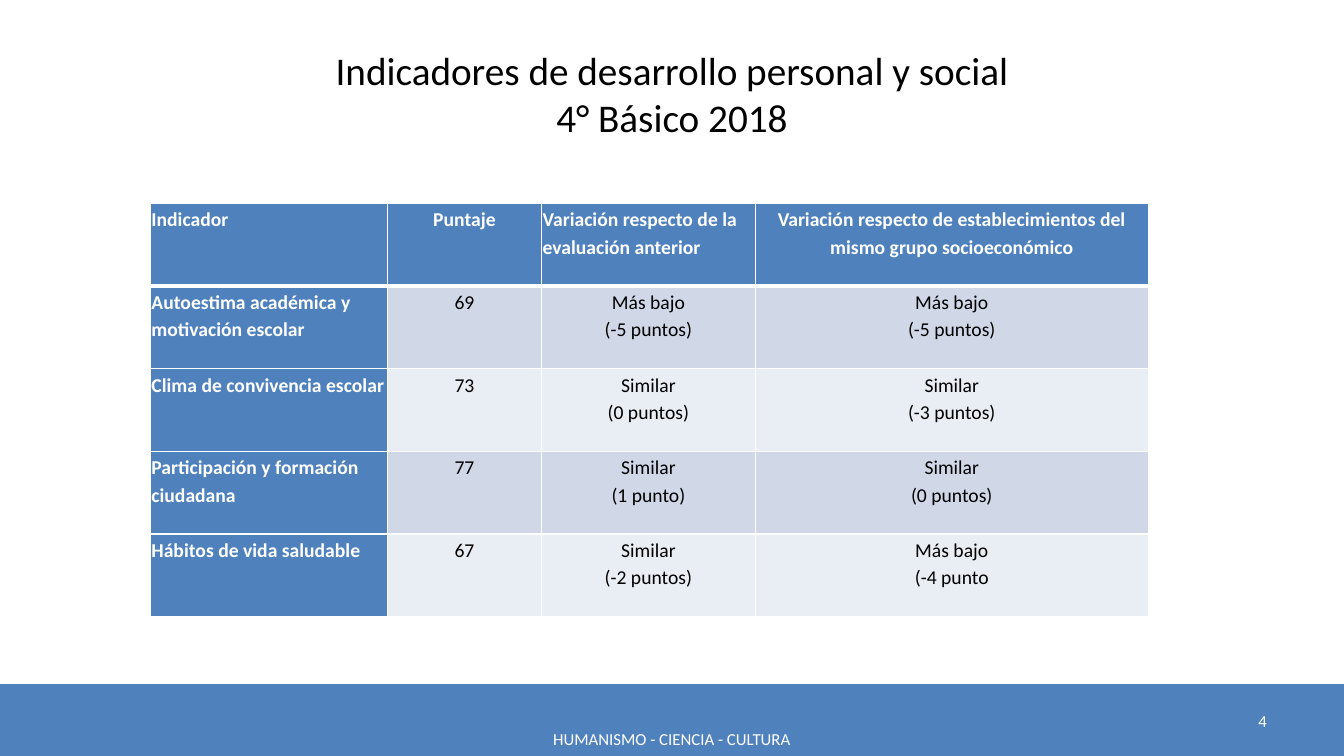
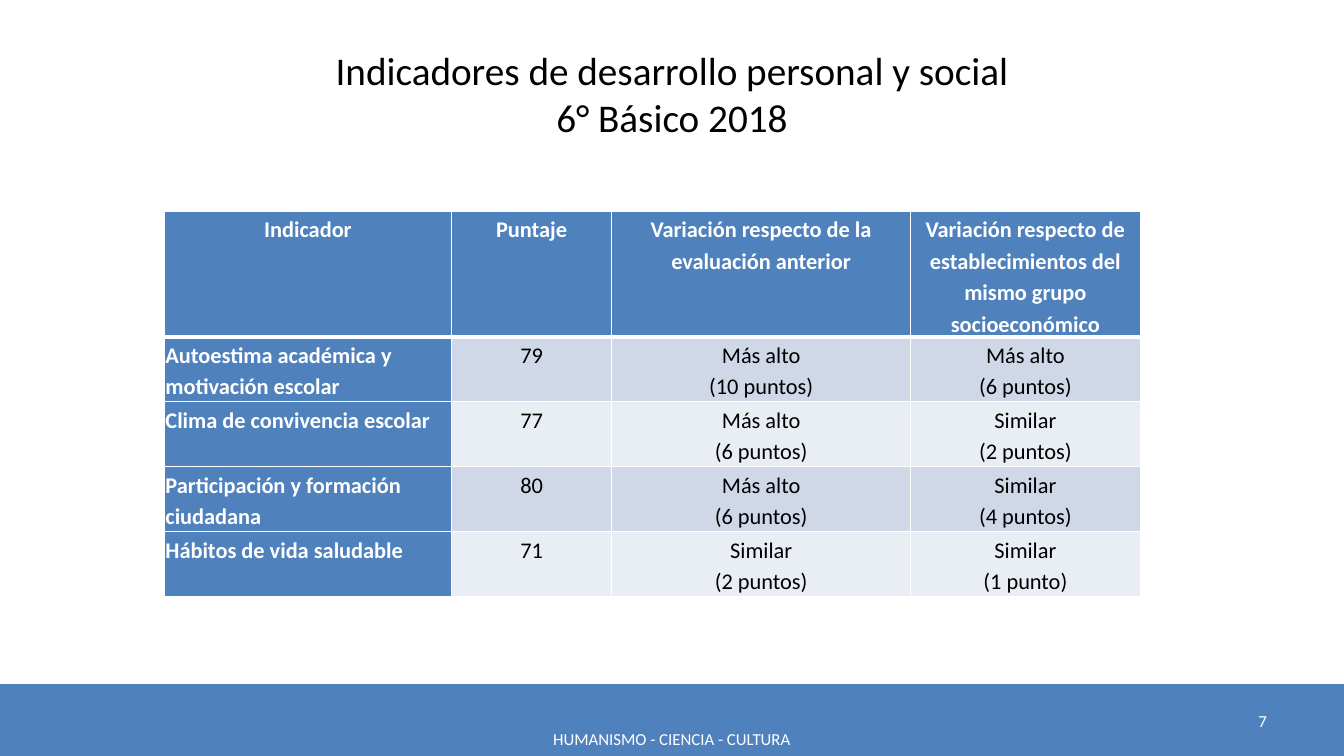
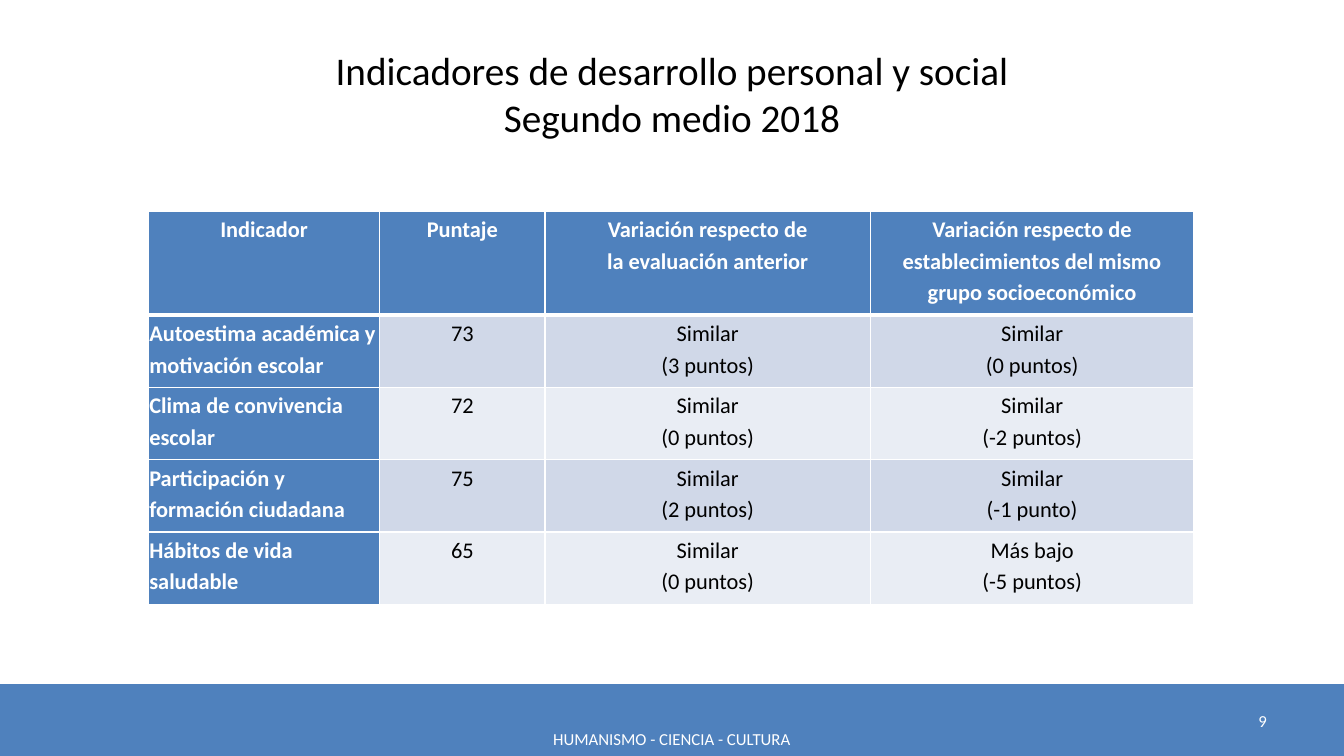
from pptx import Presentation
from pptx.dml.color import RGBColor
from pptx.enum.shapes import MSO_SHAPE
from pptx.enum.text import MSO_ANCHOR, PP_ALIGN
from pptx.oxml import parse_xml
from pptx.oxml.ns import nsdecls
from pptx.util import Pt

BLUE = RGBColor(0x4F, 0x81, 0xBD)
BANDS = RGBColor(0xD0, 0xD8, 0xE8), RGBColor(0xE9, 0xED, 0xF4)
WHITE = RGBColor(0xFF, 0xFF, 0xFF)
BLACK = RGBColor(0, 0, 0)
FONT = "Calibri"

HEADS = [
    "Indicador",
    "Puntaje",
    "Variación respecto de la evaluación anterior",
    "Variación respecto de establecimientos del mismo grupo socioeconómico",
]
SPLIT_HEADS = HEADS[:2] + [
    "Variación respecto de\nla evaluación anterior",
    "Variación respecto de establecimientos del mismo\ngrupo socioeconómico",
]
INDICATORS = [
    "Autoestima académica y motivación escolar",
    "Clima de convivencia escolar",
    "Participación y formación ciudadana",
    "Hábitos de vida saludable",
]


class Deck:
    def __init__(self):
        self.prs = Presentation()
        self.prs.slide_width, self.prs.slide_height = Pt(960), Pt(540)
        self.s = None

    def slide(self, course, number):
        """Add a slide with its band, title, footer and number."""
        self.s = self.prs.slides.add_slide(self.prs.slide_layouts[6])
        self.band()
        self.text(f"Indicadores de desarrollo personal y social\v{course}",
                  (48, 21.6, 864, 90), 28, BLACK)
        self.text("HUMANISMO - CIENCIA - CULTURA", (328, 516, 304, 24), 12, WHITE)
        self.text(str(number), (688, 500.5, 224, 28.8), 12, WHITE, PP_ALIGN.RIGHT)

    def band(self):
        sp = self.s.shapes.add_shape(MSO_SHAPE.RECTANGLE, 0, Pt(489.6), Pt(960), Pt(50.4))
        sp.shadow.inherit = False
        sp.fill.solid()
        sp.fill.fore_color.rgb = BLUE
        sp.line.color.rgb = BLUE
        sp.line.width = Pt(2)

    def style(self, p, size, color, align, bold=False):
        p.alignment = align
        p.font.name, p.font.size, p.font.bold = FONT, Pt(size), bold
        p.font.color.rgb = color

    def text(self, text, box, size, color, align=PP_ALIGN.CENTER):
        tf = self.s.shapes.add_textbox(*map(Pt, box)).text_frame
        tf.word_wrap = True
        tf.vertical_anchor = MSO_ANCHOR.MIDDLE
        p = tf.paragraphs[0]
        p.text = text
        self.style(p, size, color, align)

    def borders(self, cell, top, bottom):
        """Draw white borders, with the top and bottom widths in points."""
        tc_pr = cell._tc.get_or_add_tcPr()
        for i, (side, width) in enumerate(zip("LRTB", (1, 1, top, bottom))):
            tc_pr.insert(i, parse_xml(
                f'<a:ln{side} {nsdecls("a")} w="{Pt(width)}"><a:solidFill>'
                f'<a:srgbClr val="{WHITE}"/></a:solidFill></a:ln{side}>'))

    def cell(self, cell, text, size, fill, color, align, bold):
        cell.margin_left = cell.margin_right = Pt(0.7)
        cell.margin_top = cell.margin_bottom = Pt(0.7)
        cell.fill.solid()
        cell.fill.fore_color.rgb = fill
        cell.text = text
        for p in cell.text_frame.paragraphs:
            self.style(p, size, color, align, bold)
            p.line_spacing = 1.15

    def table(self, left, top, widths, heights, size, heads, results, left_heads=()):
        """Add the indicator table; heights are those of the head and of a body row."""
        head_height, row_height = heights
        rows = [heads] + [
            [name, str(score), *(f"{verdict}\n({points}" for verdict, points in changes)]
            for name, (score, *changes) in zip(INDICATORS, results)]
        total = head_height + row_height * len(results)
        table = self.s.shapes.add_table(len(rows), len(heads), Pt(left), Pt(top),
                                        Pt(sum(widths)), Pt(total)).table
        table.first_col = True
        for column, width in zip(table.columns, widths):
            column.width = Pt(width)
        for i, row in enumerate(rows):
            table.rows[i].height = Pt(row_height if i else head_height)
            for j, text in enumerate(row):
                is_label = i == 0 or j == 0
                at_left = j in left_heads if i == 0 else j == 0
                cell = table.cell(i, j)
                self.cell(cell, text, size,
                          BLUE if is_label else BANDS[(i - 1) % 2],
                          WHITE if is_label else BLACK,
                          PP_ALIGN.LEFT if at_left else PP_ALIGN.CENTER, is_label)
                self.borders(cell, 3 if i == 1 else 1, 3 if i == 0 else 1)


def main():
    deck = Deck()

    deck.slide("4° Básico 2018", 4)
    deck.table(107.5, 145.5, (169.2, 110.2, 152.6, 280.8), (59, 59), 14, HEADS, [
        (69, ("Más bajo", "-5 puntos)"), ("Más bajo", "-5 puntos)")),
        (73, ("Similar", "0 puntos)"), ("Similar", "-3 puntos)")),
        (77, ("Similar", "1 punto)"), ("Similar", "0 puntos)")),
        (67, ("Similar", "-2 puntos)"), ("Más bajo", "-4 punto")),
    ], left_heads=(0, 2))

    deck.slide("6° Básico 2018", 7)
    deck.table(117.5, 151, (205, 114.5, 213.5, 164), (83.5, 46.4), 16, HEADS, [
        (79, ("Más alto", "10 puntos)"), ("Más alto", "6 puntos)")),
        (77, ("Más alto", "6 puntos)"), ("Similar", "2 puntos)")),
        (80, ("Más alto", "6 puntos)"), ("Similar", "4 puntos)")),
        (71, ("Similar", "2 puntos)"), ("Similar", "1 punto)")),
    ])

    deck.slide("Segundo medio 2018", 9)
    deck.table(106, 151, (165.3, 118, 232.5, 231), (74.2, 51.6), 16, SPLIT_HEADS, [
        (73, ("Similar", "3 puntos)"), ("Similar", "0 puntos)")),
        (72, ("Similar", "0 puntos)"), ("Similar", "-2 puntos)")),
        (75, ("Similar", "2 puntos)"), ("Similar", "-1 punto)")),
        (65, ("Similar", "0 puntos)"), ("Más bajo", "-5 puntos)")),
    ])

    deck.prs.save("out.pptx")


if __name__ == "__main__":
    main()
